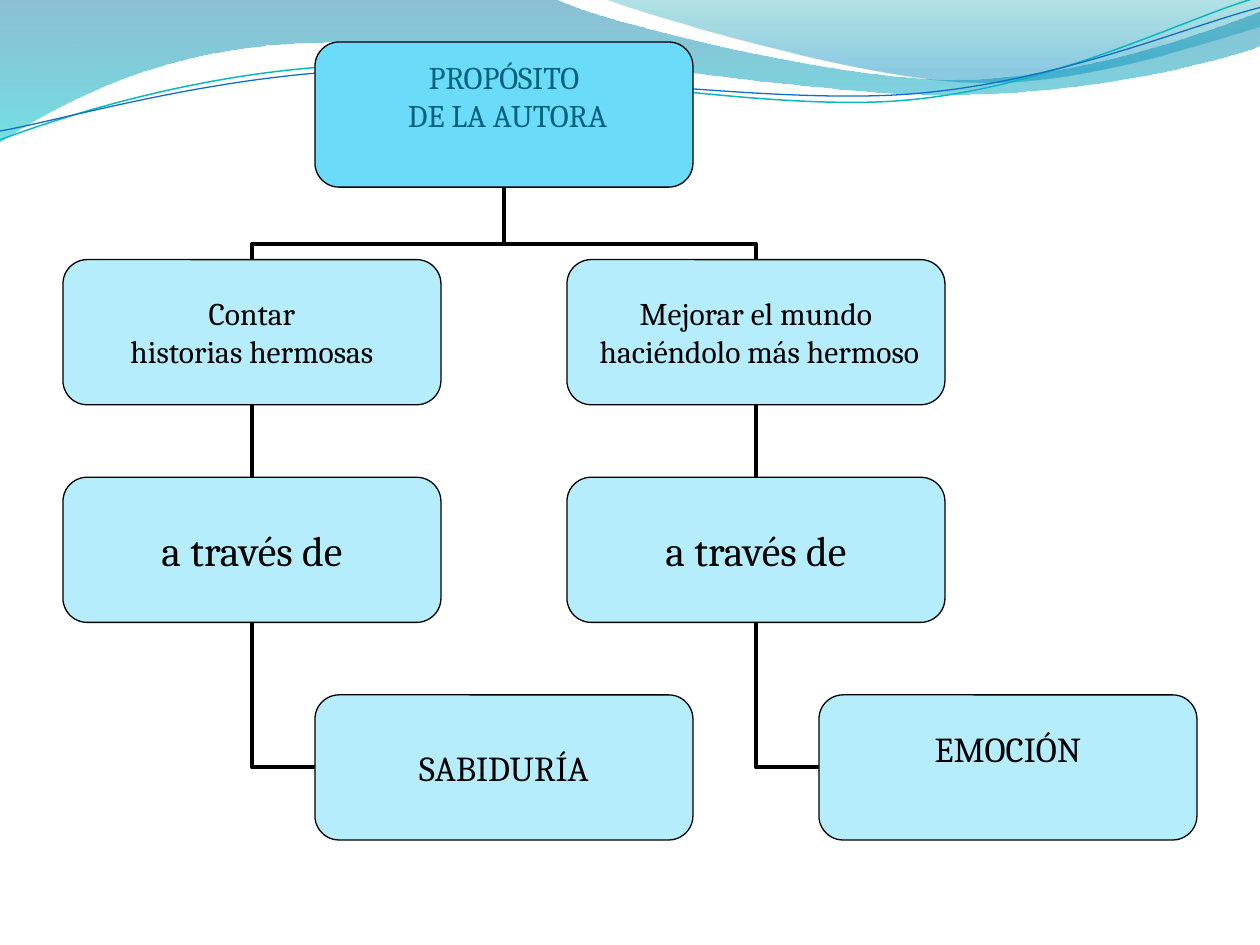
import math

import pptx
import pptx.dml.color
import pptx.enum.shapes
import pptx.enum.text
import pptx.oxml
import pptx.oxml.ns
import pptx.util
from pptx.util import Inches

RGBColor = pptx.dml.color.RGBColor
qn = pptx.oxml.ns.qn
CONNECTOR = pptx.enum.shapes.MSO_CONNECTOR

BLACK = RGBColor(0x00, 0x00, 0x00)
TITLE_TEXT = RGBColor(0x04, 0x61, 0x7B)
TITLE_FILL = RGBColor(0x6B, 0xDB, 0xFA)
BOX_FILL = RGBColor(0xB5, 0xED, 0xFD)
DEEP_BLUE = RGBColor(0x00, 0x74, 0xA1)
TURQUOISE = RGBColor(0x00, 0xC6, 0xCF)
TEAL = RGBColor(0x00, 0xA1, 0xA9)
SKY_BLUE = RGBColor(0x00, 0x8B, 0xBF)
TEAL_LINE = RGBColor(0x0A, 0xB8, 0xBF)
BLUE_LINE = RGBColor(0x0F, 0x6F, 0xC6)

FONT = "Cambria"
# Four rows of boxes with gaps of half a box fill the height from TOP to BOTTOM.
TOP, BOTTOM = 1 / 3, 20 / 3
BOX_WIDTH, BOX_HEIGHT = 3, (BOTTOM - TOP) / 5.5
LEFT, COLUMN_STEP, ROW_STEP = 0.5, 2, 1.5 * BOX_HEIGHT
STRAND_TILT = -2.7
STRAND_CENTER = (4.99, 0.58)

# Each outline is a start, then segments: one point for a line, three for a curve.
WAVE = [[(0, -0.01)], [(4.4, -0.01)],
        [(4.76, 0.17), (6.64, 0.63), (7.58, 0.63)],
        [(8.53, 0.63), (9.58, 0.26), (10, 0.09)],
        [(10.01, 0.36)],
        [(9.83, 0.44), (8.7, 0.76), (7.46, 0.75)],
        [(6.22, 0.75), (3.82, 0.28), (2.57, 0.34)],
        [(1.29, 0.35), (0.46, 0.83), (-0.01, 1.13)],
        [(0, -0.01)]]
CREST = [[(4.79, -0.01)],
         [(5.09, 0.11), (6.82, 0.62), (7.69, 0.65)],
         [(8.56, 0.69), (9.61, 0.32), (10, 0.21)],
         [(10, 0)], [(4.79, -0.01)]]
TEAL_STRAND = [[(0, 1.11)],
               [(0.48, 0.93), (1.58, 0.57), (2.77, 0.52)],
               [(3.95, 0.47), (5.93, 0.89), (7.13, 0.8)],
               [(8.33, 0.71), (9.38, 0.15), (9.98, -0.02)]]
BLUE_STRAND = [[(0, 1.04)],
               [(0.47, 0.96), (1.64, 0.61), (2.83, 0.56)],
               [(4.03, 0.51), (5.97, 0.83), (7.17, 0.75)],
               [(8.36, 0.67), (9.41, 0.21), (10, 0.06)]]


def make_element(tag, **attributes):
    element = pptx.oxml.parse_xml(f'<{tag} {pptx.oxml.ns.nsdecls("a")}/>')
    for key, value in attributes.items():
        element.set(key, value)
    return element


def add_outline(slide, outline, close):
    (start,), *segments = outline
    builder = slide.shapes.build_freeform(Inches(start[0]), Inches(start[1]))
    builder.add_line_segments(
        [(Inches(x), Inches(y)) for segment in segments for x, y in segment], close=close)
    shape = builder.convert_to_shape()
    shape.shadow.inherit = False
    steps = iter(list(shape._element.spPr.iter(qn("a:lnTo"))))
    for segment in segments:
        lines = [next(steps) for _ in segment]
        if len(lines) == 3:
            curve = make_element("a:cubicBezTo")
            lines[0].addprevious(curve)
            for line in lines:
                curve.append(line[0])
                line.getparent().remove(line)
    return shape


def add_wave(slide, outline, stops):
    wave = add_outline(slide, outline, True)
    wave.line.fill.background()
    wave.fill.gradient()
    wave.fill.gradient_angle = 270
    for stop, (position, color, _) in zip(wave.fill.gradient_stops, stops):
        stop.position = position
        stop.color.rgb = color
    for tint, (_, _, opacity) in zip(wave._element.spPr.iter(qn("a:srgbClr")), stops):
        tint.append(make_element("a:alpha", val=str(opacity * 1000)))


def level_point(point):
    """Undo the tilt of a strand, which its rotation then restores."""
    angle = math.radians(-STRAND_TILT)
    x, y = point[0] - STRAND_CENTER[0], point[1] - STRAND_CENTER[1]
    return (STRAND_CENTER[0] + x * math.cos(angle) - y * math.sin(angle),
            STRAND_CENTER[1] + x * math.sin(angle) + y * math.cos(angle))


def add_strand(slide, outline, color, width):
    level = [[level_point(point) for point in segment] for segment in outline]
    strand = add_outline(slide, level, False)
    strand.rotation = STRAND_TILT
    strand.fill.background()
    strand.line.color.rgb = color
    strand.line.width = pptx.util.Pt(width)


def add_box(slide, column, row, lines, size, fill=BOX_FILL, color=BLACK, bottom=0):
    box = slide.shapes.add_shape(
        pptx.enum.shapes.MSO_SHAPE.ROUNDED_RECTANGLE,
        Inches(LEFT + column * COLUMN_STEP), Inches(TOP + row * ROW_STEP),
        Inches(BOX_WIDTH), Inches(BOX_HEIGHT))
    box.shadow.inherit = False
    box.fill.solid()
    box.fill.fore_color.rgb = fill
    box.line.color.rgb = BLACK
    box.line.width = pptx.util.Pt(0.75)
    frame = box.text_frame
    frame.word_wrap = False
    frame.vertical_anchor = pptx.enum.text.MSO_ANCHOR.MIDDLE
    frame.margin_left = frame.margin_right = frame.margin_top = 0
    frame.margin_bottom = Inches(bottom)
    frame.text = "\n".join(lines)
    for paragraph in frame.paragraphs:
        paragraph.alignment = pptx.enum.text.PP_ALIGN.CENTER
        paragraph.font.name = FONT
        paragraph.font.size = pptx.util.Pt(size)
        paragraph.font.color.rgb = color
    return box


def add_link(slide, kind, child, child_side, parent, backmost):
    link = slide.shapes.add_connector(kind, 0, 0, 0, 0)
    link.begin_connect(child, child_side)
    link.end_connect(parent, 2)
    link.line.color.rgb = BLACK
    link.line.width = pptx.util.Pt(2.25)
    link._element.spPr.append(make_element("a:effectLst"))
    backmost._element.addprevious(link._element)
    return link


def add_branch(slide, child, parent):
    """Leave the child upwards, run sideways, then go up to the parent."""
    branch = add_link(slide, CONNECTOR.ELBOW, child, 0, parent, parent)
    run, rise = branch.width, branch.height
    center_x, center_y = branch.left + run // 2, branch.top + rise // 2
    branch.left, branch.top = center_x - rise // 2, center_y - run // 2
    branch.width, branch.height = rise, run
    frame = branch._element.spPr.find(qn("a:xfrm"))
    for flip in ("flipH", "flipV"):
        frame.attrib.pop(flip, None)
    if child.left > parent.left:
        frame.set("rot", "5400000")
        frame.set("flipH", "1")
    else:
        frame.set("rot", "16200000")
    guides = branch._element.spPr.find(qn("a:prstGeom")).get_or_add_avLst()
    guides.append(make_element("a:gd", name="adj1", fmla="val 21700"))


def add_corner(slide, child, parent, backmost):
    corner = add_link(slide, CONNECTOR.ELBOW, child, 1, parent, backmost)
    corner._element.spPr.find(qn("a:prstGeom")).set("prst", "bentConnector2")
    frame = corner._element.spPr.find(qn("a:xfrm"))
    for flip in ("flipH", "flipV"):
        frame.attrib.pop(flip, None)
    frame.set("rot", "10800000")


def main():
    deck = pptx.Presentation()
    deck.slide_width, deck.slide_height = Inches(10), Inches(7.5)
    slide = deck.slides.add_slide(deck.slide_layouts[6])

    add_wave(slide, WAVE, [(0, DEEP_BLUE, 45), (1, TURQUOISE, 55)])
    add_wave(slide, CREST, [(0, TEAL, 30), (0.8, SKY_BLUE, 45)])
    add_strand(slide, TEAL_STRAND, TEAL_LINE, 0.85)
    add_strand(slide, BLUE_STRAND, BLUE_LINE, 0.75)

    purpose = add_box(slide, 1, 0, ["PROPÓSITO", " DE LA AUTORA"], 18,
                      TITLE_FILL, TITLE_TEXT, bottom=0.3)
    branches = [
        (0, ["Contar", "historias hermosas"], "SABIDURÍA", 0),
        (2, ["Mejorar el mundo", " haciéndolo más hermoso"], "EMOCIÓN", 0.3),
    ]
    for column, goal_lines, outcome_text, outcome_bottom in branches:
        goal = add_box(slide, column, 1, goal_lines, 18)
        means = add_box(slide, column, 2, ["a través de"], 24)
        outcome = add_box(slide, column + 1, 3, [outcome_text], 20, bottom=outcome_bottom)
        add_branch(slide, goal, purpose)
        add_link(slide, CONNECTOR.STRAIGHT, means, 0, goal, purpose)
        add_corner(slide, outcome, means, purpose)

    deck.save("out.pptx")


if __name__ == "__main__":
    main()
